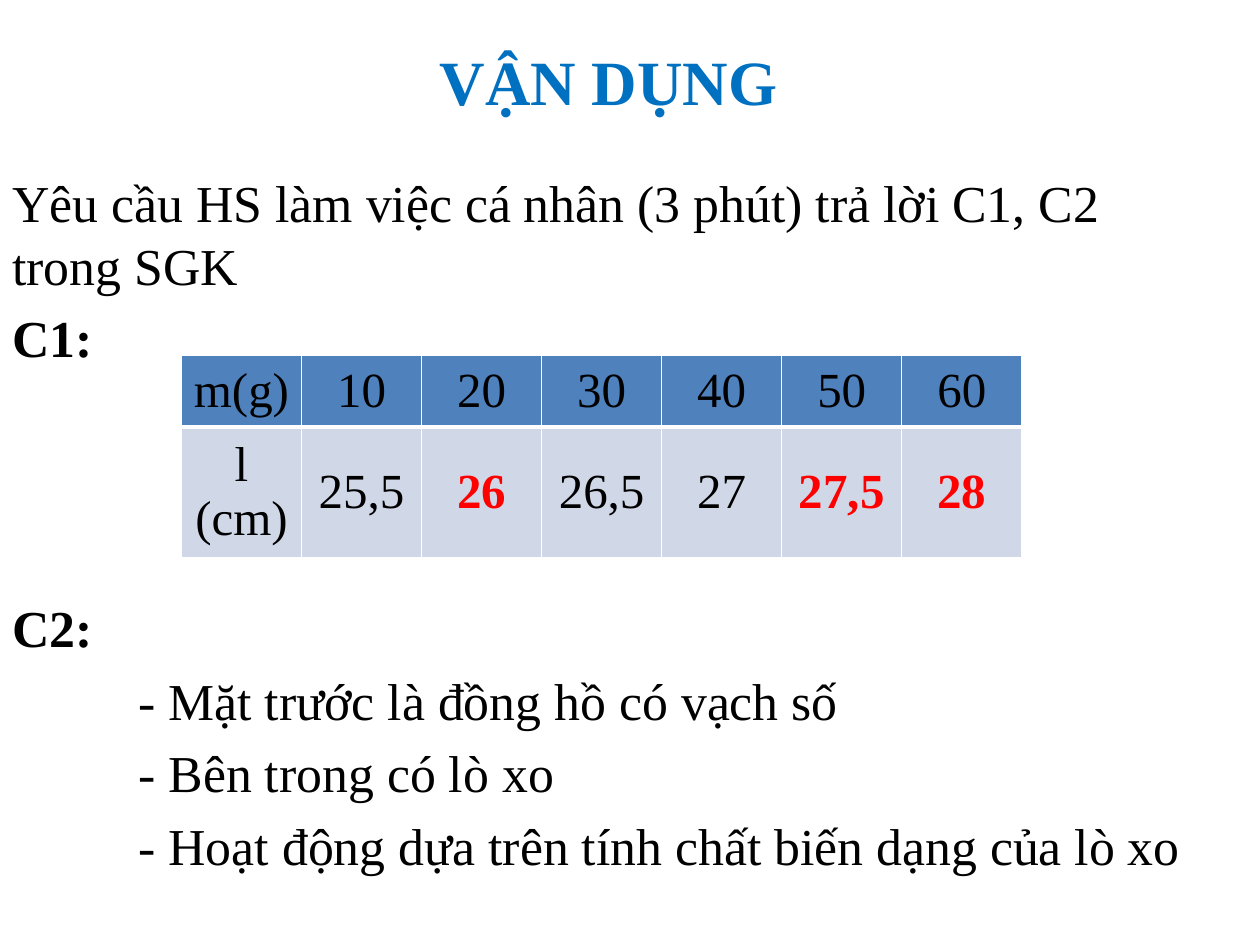
"""Build the practice slide with two exercises and a spring-length table."""
from dataclasses import dataclass, field

from lxml.etree import SubElement
from pptx import Presentation
from pptx.dml.color import RGBColor
from pptx.enum.text import MSO_ANCHOR, PP_ALIGN
from pptx.oxml.ns import qn
from pptx.util import Inches, Pt

COLORS = {
    "title": "0070C0",
    "text": "000000",
    "answer": "FF0000",
    "header": "4F81BD",
    "band": "D0D8E8",
    "border": "FFFFFF",
}
FONT = "Times New Roman"
SLIDE_WIDTH, SLIDE_HEIGHT = Inches(10), Inches(7.5)
BODY_SIZE, LINE_PITCH, GAP = 29.6, 36, 5.4
TABLE_GAP = 4 * (LINE_PITCH + GAP) - LINE_PITCH
COLUMN_WIDTH = Inches(6.67 / 7)
CELL_FORMAT = {
    "vertical_anchor": MSO_ANCHOR.MIDDLE,
    "margin_left": Inches(0.07),
    "margin_right": Inches(0.07),
    "margin_top": Inches(0.05),
    "margin_bottom": Inches(0.05),
}


@dataclass
class Line:
    text: str
    size: float = BODY_SIZE
    bold: bool = False
    color: str = "text"
    indent: float = 0
    format: dict = field(default_factory=dict)


@dataclass
class Row:
    values: list[str]
    height: float
    fill: str
    borders: dict[str, float]
    answers: tuple[int, ...] = ()


def spaced(before: float, align: PP_ALIGN = PP_ALIGN.JUSTIFY) -> dict:
    return {"alignment": align, "space_before": Pt(before), "line_spacing": Pt(LINE_PITCH)}


CENTERED = {"alignment": PP_ALIGN.CENTER}
TITLE = Line("VẬN DỤNG", 36, True, "title", format=CENTERED)
BODY = [
    Line("Yêu cầu HS làm việc cá nhân (3 phút) trả lời C1, C2 trong SGK",
         format=spaced(0, PP_ALIGN.LEFT)),
    Line("C1:", bold=True, format=spaced(GAP)),
    Line("C2:", bold=True, format=spaced(TABLE_GAP)),
    *(Line(text, indent=1, format=spaced(GAP)) for text in (
        "- Mặt trước là đồng hồ có vạch số",
        "- Bên trong có lò xo",
        "- Hoạt động dựa trên tính chất biến dạng của lò xo",
    )),
]
ROWS = [
    Row(["m(g)", "10", "20", "30", "40", "50", "60"], 0.57, "header",
        {"L": 1, "R": 1, "T": 1, "B": 3}),
    Row(["l (cm)", "25,5", "26", "26,5", "27", "27,5", "28"], 0.95, "band",
        {"L": 1, "R": 1, "T": 1, "B": 1}, (2, 5, 6)),
]


def set_attributes(target, values: dict) -> None:
    for name, value in values.items():
        setattr(target, name, value)


def write_lines(frame, lines: list[Line]) -> None:
    for index, line in enumerate(lines):
        para = frame.add_paragraph() if index else frame.paragraphs[0]
        set_attributes(para, line.format)
        if line.indent:
            para._p.get_or_add_pPr().set("marL", str(Inches(line.indent)))
        span = para.add_run()
        span.text = line.text
        set_attributes(span.font, {"name": FONT, "size": Pt(line.size), "bold": line.bold})
        span.font.color.rgb = RGBColor.from_string(COLORS[line.color])


def add_text(page, left: float, top: float, width: float, height: float,
             lines: list[Line], anchor: MSO_ANCHOR) -> None:
    box = page.shapes.add_textbox(
        int(left * SLIDE_WIDTH), int(top * SLIDE_HEIGHT),
        int(width * SLIDE_WIDTH), int(height * SLIDE_HEIGHT))
    set_attributes(box.text_frame, {"word_wrap": True, "vertical_anchor": anchor})
    write_lines(box.text_frame, lines)


def set_borders(cell, borders: dict[str, float]) -> None:
    properties = cell._tc.get_or_add_tcPr()
    for position, (side, width) in enumerate(borders.items()):
        edge = SubElement(properties, qn(f"a:ln{side}"), w=str(Pt(width)))
        fill = SubElement(edge, qn("a:solidFill"))
        SubElement(fill, qn("a:srgbClr"), val=COLORS["border"])
        properties.insert(position, edge)


def add_measurements(page, rows: list[Row]) -> None:
    columns = len(rows[0].values)
    table = page.shapes.add_table(
        len(rows), columns, int(0.144 * SLIDE_WIDTH), int(0.376 * SLIDE_HEIGHT),
        COLUMN_WIDTH * columns, Inches(sum(row.height for row in rows))).table
    for column in table.columns:
        column.width = COLUMN_WIDTH
    for row_index, row in enumerate(rows):
        table.rows[row_index].height = Inches(row.height)
        for column_index, value in enumerate(row.values):
            cell = table.cell(row_index, column_index)
            answer = column_index in row.answers
            set_attributes(cell, CELL_FORMAT)
            cell.fill.solid()
            cell.fill.fore_color.rgb = RGBColor.from_string(COLORS[row.fill])
            set_borders(cell, row.borders)
            color = "answer" if answer else "text"
            write_lines(cell.text_frame, [Line(value, 28, answer, color, format=CENTERED)])


def main() -> None:
    deck = Presentation()
    set_attributes(deck, {"slide_width": SLIDE_WIDTH, "slide_height": SLIDE_HEIGHT})
    page = deck.slides.add_slide(deck.slide_layouts[6])
    add_text(page, 0, 0.173, 0.975, 0.704, BODY, MSO_ANCHOR.TOP)
    add_text(page, 0.253, 0.027, 0.46, 0.115, [TITLE], MSO_ANCHOR.MIDDLE)
    add_measurements(page, ROWS)
    deck.save("out.pptx")


if __name__ == "__main__":
    main()
